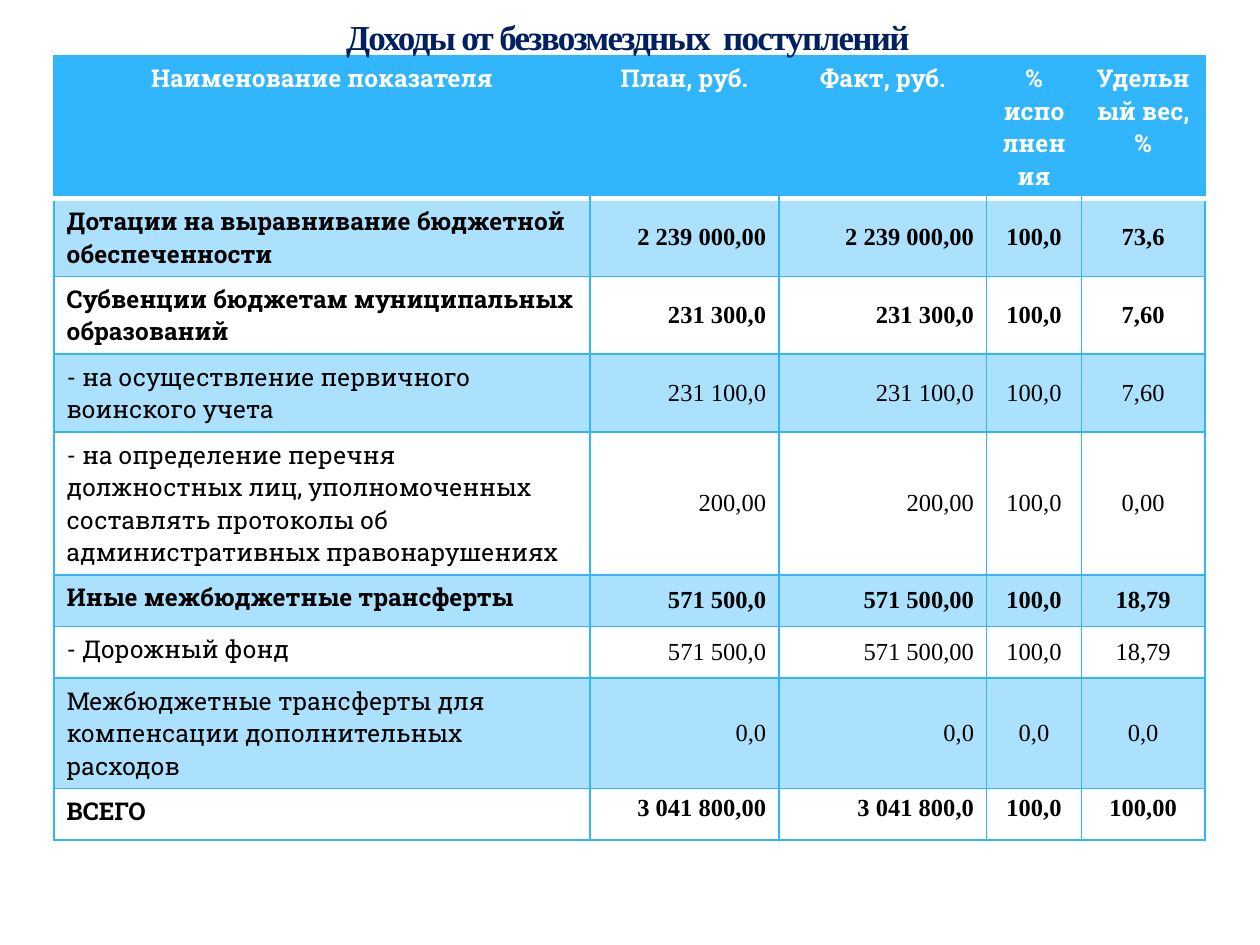
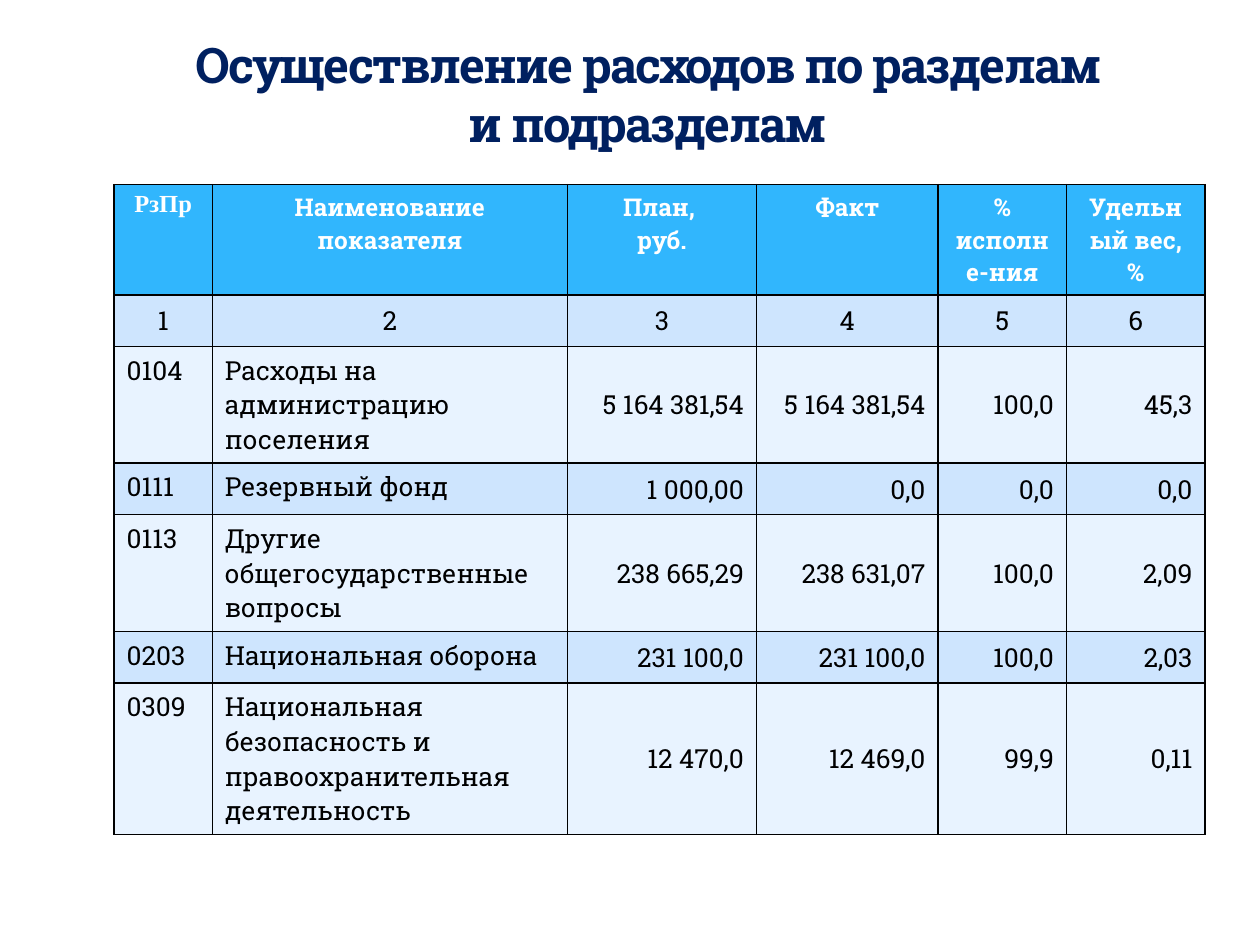
"""Build two budget slides: income from grants and spending by section."""
from lxml.etree import Element, SubElement
from pptx import Presentation
from pptx.dml.color import RGBColor
from pptx.enum.text import MSO_ANCHOR as Anchor, MSO_AUTO_SIZE as AutoSize, PP_ALIGN as Align
from pptx.oxml.ns import qn
from pptx.util import Cm, Pt

NAVY = RGBColor(0x00, 0x20, 0x60)
SKY = RGBColor(0x31, 0xB6, 0xFD)
PALE = RGBColor(0xCE, 0xE5, 0xFE)
PALER = RGBColor(0xE8, 0xF3, 0xFF)
MIST = RGBColor(0xAF, 0xCC, 0xDE)
WHITE = RGBColor(0xFF, 0xFF, 0xFF)
BLACK = RGBColor(0x00, 0x00, 0x00)
SLAB, TIMES = "Roboto Slab", "Times New Roman"
LEFT, CENTER, RIGHT = Align.LEFT, Align.CENTER, Align.RIGHT
HEADER_FONT = dict(name=SLAB, size=Pt(14), bold=True)

INCOME_TITLE = dict(text="Доходы от безвозмездных  поступлений", place=(2.9, 0, 19.51, 1.47),
                    anchor=Anchor.MIDDLE, font=dict(name=TIMES, size=Pt(20), bold=True))
INCOME_HEAD = ["Наименование показателя", "План, руб.", "Факт, руб.", "% исполнения", "Удельный вес, %"]
INCOME_ROWS = [
    ("Дотации на выравнивание бюджетной обеспеченности", "2 239 000,00", "2 239 000,00", "100,0", "73,6"),
    ("Субвенции бюджетам муниципальных образований", "231 300,0", "231 300,0", "100,0", "7,60"),
    ("- на осуществление первичного воинского учета", "231 100,0", "231 100,0", "100,0", "7,60"),
    ("- на определение перечня должностных лиц, уполномоченных составлять протоколы "
     "об административных правонарушениях", "200,00", "200,00", "100,0", "0,00"),
    ("Иные межбюджетные трансферты", "571 500,0", "571 500,00", "100,0", "18,79"),
    ("- Дорожный фонд", "571 500,0", "571 500,00", "100,0", "18,79"),
    ("Межбюджетные трансферты для компенсации дополнительных расходов", "0,0", "0,0", "0,0", "0,0"),
    ("ВСЕГО", "3 041 800,00", "3 041 800,0", "100,0", "100,00"),
]
INCOME_BOLD_ROWS = {1, 2, 5, 8}
INCOME_ALIGNS = [LEFT, RIGHT, RIGHT, CENTER, CENTER]
INCOME_WIDTHS = [10.8, 3.81, 4.19, 1.91, 2.49]
INCOME_HEIGHTS = [2.86, 1.57, 1.57, 1.57, 2.86, 1.04, 1.04, 2.22, 1.04]

SPENDING_TITLE = dict(text="Осуществление расходов по разделам и подразделам", place=(3.3, 1.93, 19.51, 1.27),
                      anchor=Anchor.BOTTOM, font=dict(name=SLAB, size=Pt(28), bold=True))
SPENDING_HEAD = ["РзПр", "Наименование показателя", "План, \nруб.", "Факт", "% исполне-ния", "Удельный вес, %"]
SPENDING_ROWS = [
    ("1", "2", "3", "4", "5", "6"),
    ("0104", "Расходы на администрацию поселения", "5 164 381,54", "5 164 381,54", "100,0", "45,3"),
    ("0111", "Резервный фонд", "1 000,00", "0,0", "0,0", "0,0"),
    ("0113", "Другие общегосударственные вопросы", "238 665,29", "238 631,07", "100,0", "2,09"),
    ("0203", "Национальная оборона", "231 100,0", "231 100,0", "100,0", "2,03"),
    ("0309", "Национальная безопасность и правоохранительная деятельность",
     "12 470,0", "12 469,0", "99,9", "0,11"),
]
SPENDING_ALIGNS = [LEFT, LEFT, RIGHT, RIGHT, RIGHT, RIGHT]
SPENDING_WIDTHS = [1.98, 7.16, 3.81, 3.66, 2.59, 2.79]
SPENDING_HEIGHTS = [2.21, 1.04, 2.34, 1.04, 2.34, 1.04, 3.05]


def set_font(span, color, formats):
    for key, value in formats.items():
        setattr(span.font, key, value)
    span.font.color.rgb = color


def add_solid_fill(parent, color, alpha=None):
    tint = SubElement(SubElement(parent, qn("a:solidFill")), qn("a:srgbClr"), val=str(color))
    if alpha:
        SubElement(tint, qn("a:alpha"), val=str(alpha * 1000))


def add_title(page, text, place, anchor, font):
    box = page.shapes.add_textbox(*map(Cm, place))
    frame = box.text_frame
    frame.word_wrap, frame.auto_size, frame.vertical_anchor = True, AutoSize.NONE, anchor
    para = frame.paragraphs[0]
    para.alignment = CENTER
    span = para.add_run()
    span.text = text
    set_font(span, NAVY, font)
    props = span._r.get_or_add_rPr()
    props.set("spc", "-100")
    outline = Element(qn("a:ln"), w=str(Pt(0.25)))
    add_solid_fill(outline, MIST, 25)
    props.insert(0, outline)


def set_borders(cell, borders):
    props = cell._tc.get_or_add_tcPr()
    for index, side in enumerate("LRTB"):
        line = Element(qn(f"a:ln{side}"))
        if borders[side]:
            color, width = borders[side]
            line.set("w", str(Pt(width)))
            add_solid_fill(line, color)
        else:
            SubElement(line, qn("a:noFill"))
        props.insert(index, line)


def fill_cell(cell, fill, alpha=None):
    if fill is None:
        cell.fill.background()
        return
    cell.fill.solid()
    cell.fill.fore_color.rgb = fill
    if alpha:
        tint = cell._tc.tcPr.find(qn("a:solidFill")).find(qn("a:srgbClr"))
        SubElement(tint, qn("a:alpha"), val=str(alpha * 1000))


def write_cell(cell, text, align, anchor, color, formats):
    cell.text = text
    cell.vertical_anchor = anchor
    for para in cell.text_frame.paragraphs:
        para.alignment = align
        for span in para.runs:
            set_font(span, color, formats)


def add_table(page, left, top, widths, heights, rows, style):
    frame = page.shapes.add_table(len(rows), len(widths), Cm(left), Cm(top), Cm(sum(widths)), Cm(sum(heights)))
    table = frame.table
    table.first_row = table.horz_banding = False
    for column, width in zip(table.columns, widths):
        column.width = Cm(width)
    for row, height in zip(table.rows, heights):
        row.height = Cm(height)
    for r, texts in enumerate(rows):
        for c, text in enumerate(texts):
            cell = table.cell(r, c)
            look = style(r, c)
            fill_cell(cell, *look["fill"])
            set_borders(cell, look["borders"])
            write_cell(cell, text, *look["text"])


def income_style(r, c):
    rule, gap = (SKY, 1), (WHITE, 3)
    borders = dict.fromkeys("LRTB", rule)
    if r == 0:
        borders.update(L=None if c else rule, R=rule if c == len(INCOME_WIDTHS) - 1 else None, B=gap)
        return dict(fill=(SKY,), borders=borders, text=(CENTER, Anchor.TOP, WHITE, HEADER_FONT))
    if r == 1:
        borders["T"] = gap
    anchor = Anchor.MIDDLE if c and r < len(INCOME_ROWS) else Anchor.TOP
    formats = dict(name=TIMES if c else SLAB, size=Pt(14), bold=r in INCOME_BOLD_ROWS)
    return dict(fill=(SKY, 40) if r % 2 else (None,), borders=borders,
                text=(INCOME_ALIGNS[c], anchor, BLACK, formats))


def spending_style(r, c):
    borders = dict.fromkeys("LRTB", (BLACK, 1))
    if r == 0:
        formats = HEADER_FONT if c else {**HEADER_FONT, "name": TIMES}
        return dict(fill=(SKY,), borders=borders, text=(CENTER, Anchor.TOP, WHITE, formats))
    align = CENTER if r == 1 else SPENDING_ALIGNS[c]
    anchor = Anchor.TOP if align == LEFT else Anchor.MIDDLE
    formats = dict(name=SLAB, size=Pt(15), bold=False)
    return dict(fill=(PALE if r % 2 else PALER,), borders=borders, text=(align, anchor, BLACK, formats))


def main():
    deck = Presentation()
    deck.slide_width, deck.slide_height = Cm(25.4), Cm(19.05)
    slides = [
        (INCOME_TITLE, (1.09, 1.12, INCOME_WIDTHS, INCOME_HEIGHTS, [INCOME_HEAD, *INCOME_ROWS], income_style)),
        (SPENDING_TITLE, (2.3, 3.72, SPENDING_WIDTHS, SPENDING_HEIGHTS,
                          [SPENDING_HEAD, *SPENDING_ROWS], spending_style)),
    ]
    for title, table in slides:
        page = deck.slides.add_slide(deck.slide_layouts[6])
        add_table(page, *table)
        add_title(page, **title)
    deck.save("out.pptx")


if __name__ == "__main__":
    main()
